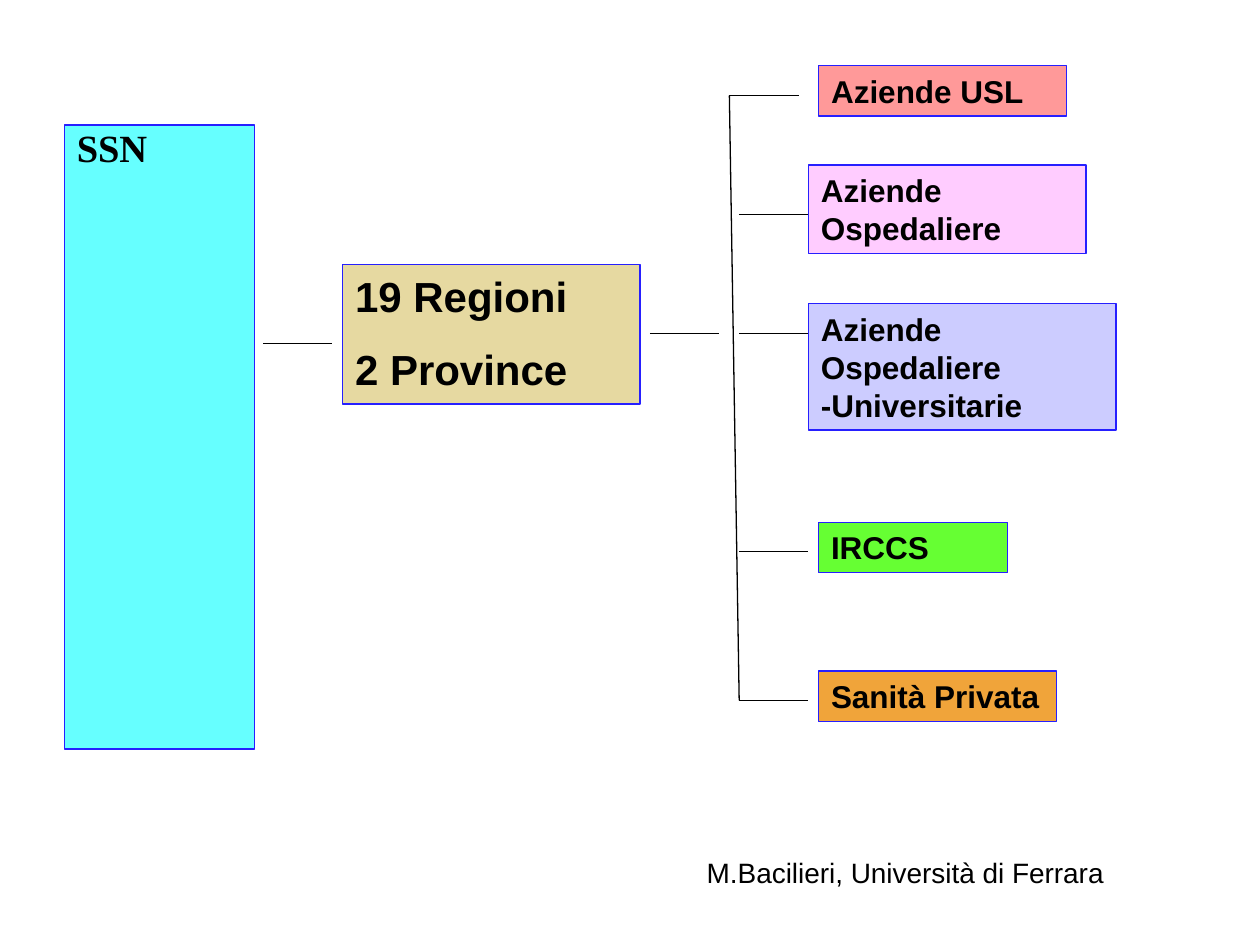
from dataclasses import dataclass

from lxml import etree
from pptx import Presentation
from pptx.dml.color import RGBColor
from pptx.enum.shapes import MSO_CONNECTOR as Connector, MSO_SHAPE as Shape
from pptx.enum.text import MSO_ANCHOR as Anchor, PP_ALIGN as Align
from pptx.oxml.ns import qn
from pptx.util import Pt

BLACK = RGBColor(0x00, 0x00, 0x00)
BLUE = RGBColor(0x26, 0x1F, 0xFF)
CYAN = RGBColor(0x66, 0xFF, 0xFF)
SAND = RGBColor(0xE6, 0xD9, 0xA1)
SALMON = RGBColor(0xFF, 0x99, 0x99)
PINK = RGBColor(0xFF, 0xCC, 0xFF)
LILAC = RGBColor(0xCC, 0xCC, 0xFF)
GREEN = RGBColor(0x66, 0xFF, 0x33)
ORANGE = RGBColor(0xF0, 0xA4, 0x3A)

LINE_WIDTH = 0.75
BRANCH_LENGTH = 39.6


@dataclass
class Block:
    lines: list[str]
    left: float
    top: float
    width: float
    height: float
    fill: RGBColor
    size: float = 18
    font: str = "Arial"
    inset_top: float = 3.6
    line_spacing: float | None = None


def write_lines(frame, lines: list[str], size: float, font: str, bold: bool,
                line_spacing: float | None = None) -> None:
    frame.word_wrap = True
    frame.vertical_anchor = Anchor.TOP
    for index, line in enumerate(lines):
        para = frame.add_paragraph() if index else frame.paragraphs[0]
        para.alignment = Align.LEFT
        if index:
            para.space_before = Pt(13)
        if line_spacing:
            para.line_spacing = Pt(line_spacing)
        span = para.add_run()
        span.text = line
        span.font.name = font
        span.font.size = Pt(size)
        span.font.bold = bold
        span.font.color.rgb = BLACK


def draw_block(page, block: Block) -> None:
    box = page.shapes.add_shape(Shape.RECTANGLE, Pt(block.left), Pt(block.top),
                                Pt(block.width), Pt(block.height))
    box.shadow.inherit = False
    box.fill.solid()
    box.fill.fore_color.rgb = block.fill
    box.line.color.rgb = BLUE
    box.line.width = Pt(LINE_WIDTH)
    box.text_frame.margin_top = Pt(block.inset_top)
    write_lines(box.text_frame, block.lines, block.size, block.font, True,
                block.line_spacing)


def draw_line(page, x1: float, y1: float, x2: float, y2: float) -> None:
    line = page.shapes.add_connector(Connector.STRAIGHT, Pt(x1), Pt(y1), Pt(x2), Pt(y2))
    line.line.color.rgb = BLACK
    line.line.width = Pt(LINE_WIDTH)
    etree.SubElement(line._element.spPr, qn("a:effectLst"))


BLOCKS = [
    # National service and regions
    Block(["SSN"], 36.8, 71.4, 108.6, 356.6, CYAN, 22, "Times New Roman", 0, 26),
    Block(["19 Regioni", "2 Province"], 195.8, 151, 170, 80, SAND, 24),
    # Providers
    Block(["Aziende USL"], 467.8, 37.6, 141.6, 28.8, SALMON),
    Block(["Aziende Ospedaliere"], 462, 94.4, 158.6, 50.4, PINK),
    Block(["Aziende Ospedaliere -Universitarie"], 462, 173.6, 175.8, 72.2, LILAC),
    Block(["IRCCS"], 467.8, 298.4, 108, 28.8, GREEN),
    Block(["Sanità Privata"], 467.8, 383.4, 136, 28.8, ORANGE),
]

# Left end and height of each horizontal branch
TRUNK_TOP = (416.8, 54.6)
TRUNK_BOTTOM = (422.4, 400.2)
BRANCHES = [
    (150.4, 196.2), (371.4, 190.6),
    TRUNK_TOP, (422.4, 122.4), (422.4, 190.6), (422.4, 315.2), TRUNK_BOTTOM,
]


def main() -> None:
    deck = Presentation()
    deck.slide_width, deck.slide_height = Pt(720), Pt(540)
    page = deck.slides.add_slide(deck.slide_layouts[6])

    # Connecting lines
    for x, y in BRANCHES:
        draw_line(page, x, y, x + BRANCH_LENGTH, y)
    draw_line(page, *TRUNK_BOTTOM, *TRUNK_TOP)

    # Boxes
    for block in BLOCKS:
        draw_block(page, block)

    # Author
    author = page.shapes.add_textbox(Pt(396.8), Pt(485.2), Pt(297.4), Pt(26.6))
    write_lines(author.text_frame, ["M.Bacilieri, Università di Ferrara"], 16, "Arial", False)

    deck.save("out.pptx")


if __name__ == "__main__":
    main()
